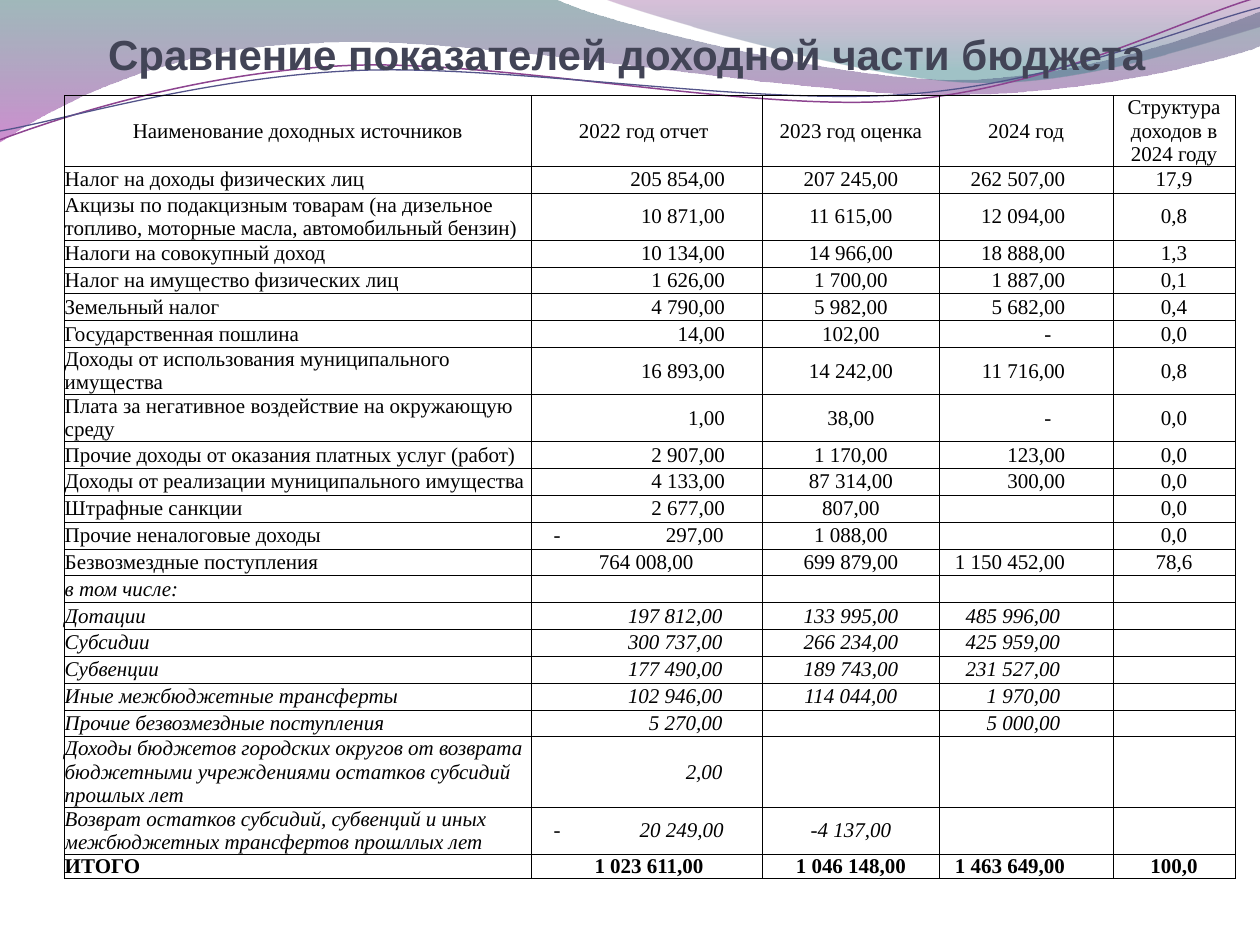
from lxml import etree
from pptx import Presentation
from pptx import util as u
from pptx.dml.color import RGBColor
from pptx.enum import text
from pptx.oxml import ns

Inches = u.Inches
COLORS = {"ink": "000000", "title": "424456", "teal": "2D6368", "violet": "A530A9",
          "plum": "7F2F82", "sea": "2F7B82", "purple line": "8D4490", "blue line": "53548A"}
COLUMN_WIDTHS = [3.7, 1.84, 1.4, 1.38, 0.97]
ROW_HEIGHTS = {1: Inches(0.64) // 3, 2: Inches(1.12) // 3, 3: Inches(0.56)}
TOTAL_HEIGHT = Inches(0.19)
RIGHT_INSETS = {1: 0.3, 3: 0.38}
ITALIC_INSETS = {1: 0.32, 3: 0.42}
HEADER = ["Наименование доходных источников", "2022 год отчет", "2023 год оценка",
          "2024 год", "Структура доходов в 2024 году"]
INCOME = [
    ("Налог на доходы физических лиц", "205 854,00", "207 245,00", "262 507,00", "17,9"),
    ("Акцизы по подакцизным товарам (на дизельное топливо, моторные масла, автомобильный бензин)",
     "10 871,00", "11 615,00", "12 094,00", "0,8"),
    ("Налоги на совокупный доход", "10 134,00", "14 966,00", "18 888,00", "1,3"),
    ("Налог на имущество физических лиц", "1 626,00", "1 700,00", "1 887,00", "0,1"),
    ("Земельный налог", "4 790,00", "5 982,00", "5 682,00", "0,4"),
    ("Государственная пошлина", "14,00", "102,00", "-", "0,0"),
    ("Доходы от использования муниципального имущества",
     "16 893,00", "14 242,00", "11 716,00", "0,8"),
    ("Плата за негативное воздействие на окружающую среду", "1,00", "38,00", "-", "0,0"),
    ("Прочие доходы от оказания платных услуг (работ)", "2 907,00", "1 170,00", "123,00", "0,0"),
    ("Доходы от реализации муниципального имущества", "4 133,00", "87 314,00", "300,00", "0,0"),
    ("Штрафные санкции", "2 677,00", "807,00", "", "0,0"),
    ("Прочие неналоговые доходы", "-\t297,00", "1 088,00", "", "0,0"),
    ("Безвозмездные поступления", "764 008,00", "699 879,00", "1 150 452,00", "78,6"),
]
TRANSFERS = [
    ("в том числе:", "", "", "", ""),
    ("Дотации", "197 812,00", "133 995,00", "485 996,00", ""),
    ("Субсидии", "300 737,00", "266 234,00", "425 959,00", ""),
    ("Субвенции", "177 490,00", "189 743,00", "231 527,00", ""),
    ("Иные межбюджетные трансферты", "102 946,00", "114 044,00", "1 970,00", ""),
    ("Прочие безвозмездные поступления", "5 270,00", "", "5 000,00", ""),
    ("Доходы бюджетов городских округов от возврата бюджетными учреждениями остатков "
     "субсидий прошлых лет", "2,00", "", "", ""),
    ("Возврат остатков субсидий, субвенций и иных межбюджетных трансфертов прошллых лет",
     "-\t20 249,00", "-4 137,00", "", ""),
]
TOTAL = ("ИТОГО", "1 023 611,00", "1 046 148,00", "1 463 649,00", "100,0")


def rgb(name):
    """Return the named colour."""
    return RGBColor.from_string(COLORS[name])


def add_outline(page, steps, closed):
    """Add a freeform whose steps are lines (pairs) or Bezier curves (six numbers)."""
    points = [(Inches(step[at]), Inches(step[at + 1]))
              for step in steps for at in range(0, len(step), 2)]
    builder = page.shapes.build_freeform(*points[0])
    builder.add_line_segments(points[1:], close=closed)
    shape = builder.convert_to_shape()
    shape.shadow.inherit = False
    segments = iter(list(shape.element.iter(ns.qn("a:lnTo"))))
    for step in steps[1:]:
        segment = next(segments)
        if len(step) == 6:
            segment.tag = ns.qn("a:cubicBezTo")
            for _ in range(2):
                extra = next(segments)
                segment.append(extra[0])
                extra.getparent().remove(extra)
    return shape


def add_wave(page, steps, stops):
    """Add a translucent wave with a vertical gradient."""
    wave = add_outline(page, steps, True)
    wave.line.fill.background()
    wave.fill.gradient()
    wave.fill.gradient_angle = 270
    for stop, (position, name, _) in zip(wave.fill.gradient_stops, stops):
        stop.position = position
        stop.color.rgb = rgb(name)
    for color, (_, _, opacity) in zip(wave.element.iter(ns.qn("a:srgbClr")), stops):
        etree.SubElement(color, ns.qn("a:alpha"), val=str(opacity * 1000))


def add_curve(page, steps, name, width):
    """Add a thin open curve."""
    curve = add_outline(page, steps, False)
    curve.fill.background()
    curve.line.color.rgb = rgb(name)
    curve.line.width = u.Pt(width)


def add_backdrop(page):
    """Draw the waves and curves along the top edge."""
    add_wave(page, [(0, 0), (4.4, -0.01), (4.76, 0.17, 6.64, 0.63, 7.58, 0.63),
                    (8.53, 0.63, 9.58, 0.26, 10, 0.09), (10.01, 0.36),
                    (9.83, 0.44, 8.7, 0.76, 7.46, 0.75), (6.22, 0.75, 3.82, 0.28, 2.57, 0.34),
                    (1.29, 0.36, 0.46, 0.83, -0.01, 1.13)],
             [(0, "teal", 45), (1, "violet", 55)])
    add_wave(page, [(4.79, -0.01), (5.09, 0.11, 6.82, 0.62, 7.69, 0.65),
                    (8.56, 0.69, 9.61, 0.32, 10, 0.21), (10, 0)],
             [(0, "plum", 30), (0.8, "sea", 45)])
    add_curve(page, [(0, 1.11), (0.48, 0.93, 1.58, 0.57, 2.77, 0.52),
                     (3.95, 0.47, 5.93, 0.89, 7.13, 0.8),
                     (8.33, 0.71, 9.38, 0.15, 9.98, -0.02)], "purple line", 0.85)
    add_curve(page, [(0, 1.04), (0.47, 0.96, 1.64, 0.61, 2.83, 0.56),
                     (4.03, 0.51, 5.97, 0.84, 7.17, 0.75),
                     (8.36, 0.67, 9.41, 0.21, 10, 0.06)], "blue line", 0.75)


def place_title(page, left, top, width, height):
    """Fill the title placeholder and bring it in front of the backdrop."""
    title = page.shapes.title
    title.left, title.top, title.width, title.height = left, top, width, height
    frame = title.text_frame
    frame.text = "Сравнение показателей доходной части бюджета"
    frame.word_wrap = True
    frame.auto_size = text.MSO_AUTO_SIZE.NONE
    frame.vertical_anchor = text.MSO_ANCHOR.BOTTOM
    frame.margin_left = frame.margin_bottom = 0
    frame.margin_right = Inches(0.1)
    para = frame.paragraphs[0]
    para.alignment = text.PP_ALIGN.CENTER
    para.font.name, para.font.size, para.font.bold = "Arial", u.Pt(24), True
    para.font.color.rgb = rgb("title")
    title.element.getparent().append(title.element)


def add_borders(cell):
    """Give the cell a thin line on all four sides."""
    properties = cell._tc.get_or_add_tcPr()
    for place, side in enumerate(("lnL", "lnR", "lnT", "lnB")):
        line = etree.Element(ns.qn("a:" + side), w=str(u.Pt(0.5)))
        fill = etree.SubElement(line, ns.qn("a:solidFill"))
        etree.SubElement(fill, ns.qn("a:srgbClr"), val=COLORS["ink"])
        properties.insert(place, line)


def fill_cell(cell, words, align, inset, bold, italic):
    """Write and format one table cell."""
    cell.margin_left = cell.margin_top = cell.margin_bottom = 0
    cell.margin_right = Inches(inset)
    cell.vertical_anchor = text.MSO_ANCHOR.BOTTOM if bold else text.MSO_ANCHOR.MIDDLE
    cell.fill.background()
    add_borders(cell)
    para = cell.text_frame.paragraphs[0]
    para.alignment = align
    para.font.name, para.font.size = "Times New Roman", u.Pt(12)
    para.font.bold, para.font.italic = bold, italic
    para.font.color.rgb = rgb("ink")
    if words:
        para.add_run().text = words
    else:
        etree.SubElement(para._p, ns.qn("a:endParaRPr"), sz="1200")
    if "\t" in words:
        para.alignment = text.PP_ALIGN.LEFT
        cell.margin_left, cell.margin_right = Inches(0.18), 0
        tabs = etree.Element(ns.qn("a:tabLst"))
        etree.SubElement(tabs, ns.qn("a:tab"), pos=str(Inches(1.35)), algn="r")
        para._p.get_or_add_pPr().insert(0, tabs)


def cell_layout(row, index):
    """Return the alignment and right inset of a cell."""
    if row is HEADER:
        return text.PP_ALIGN.CENTER, 0.05 if index == 1 else 0
    if index == 0:
        return text.PP_ALIGN.LEFT, 0
    if index not in RIGHT_INSETS:
        return text.PP_ALIGN.CENTER, 0
    inset = (ITALIC_INSETS if row in TRANSFERS else RIGHT_INSETS)[index]
    if row[index] == "-":
        inset = 0.49
    elif index == 1 and row is INCOME[-1]:
        inset = 0.55
    elif index == 1 and row is TOTAL:
        inset = 0.47
    return text.PP_ALIGN.RIGHT, inset


def add_budget_table(page, left, top, width):
    """Build the table of budget income."""
    rows = [HEADER, *INCOME, *TRANSFERS, TOTAL]
    table = page.shapes.add_table(len(rows), len(HEADER), left, top, width,
                                  ROW_HEIGHTS[1] * len(rows)).table
    table.first_row = table.horz_banding = False
    for column, size in zip(table.columns, COLUMN_WIDTHS):
        column.width = Inches(size)
    for number, row in enumerate(rows):
        lines = 3 if row is HEADER else 1 + (len(row[0]) > 47) + (len(row[0]) > 92)
        table.rows[number].height = TOTAL_HEIGHT if row is TOTAL else ROW_HEIGHTS[lines]
        for index, words in enumerate(row):
            fill_cell(table.cell(number, index), words, *cell_layout(row, index),
                      bold=row is TOTAL, italic=row in TRANSFERS)


def main():
    """Build and save the deck."""
    deck = Presentation()
    deck.slide_width, deck.slide_height = Inches(10), Inches(7.5)
    page = deck.slides.add_slide(deck.slide_layouts[5])
    add_backdrop(page)
    place_title(page, Inches(0.55), Inches(0.16), Inches(8.95), Inches(0.47))
    add_budget_table(page, u.Pt(37), Inches(0.76), Inches(9.29))
    deck.save("out.pptx")


if __name__ == "__main__":
    main()
